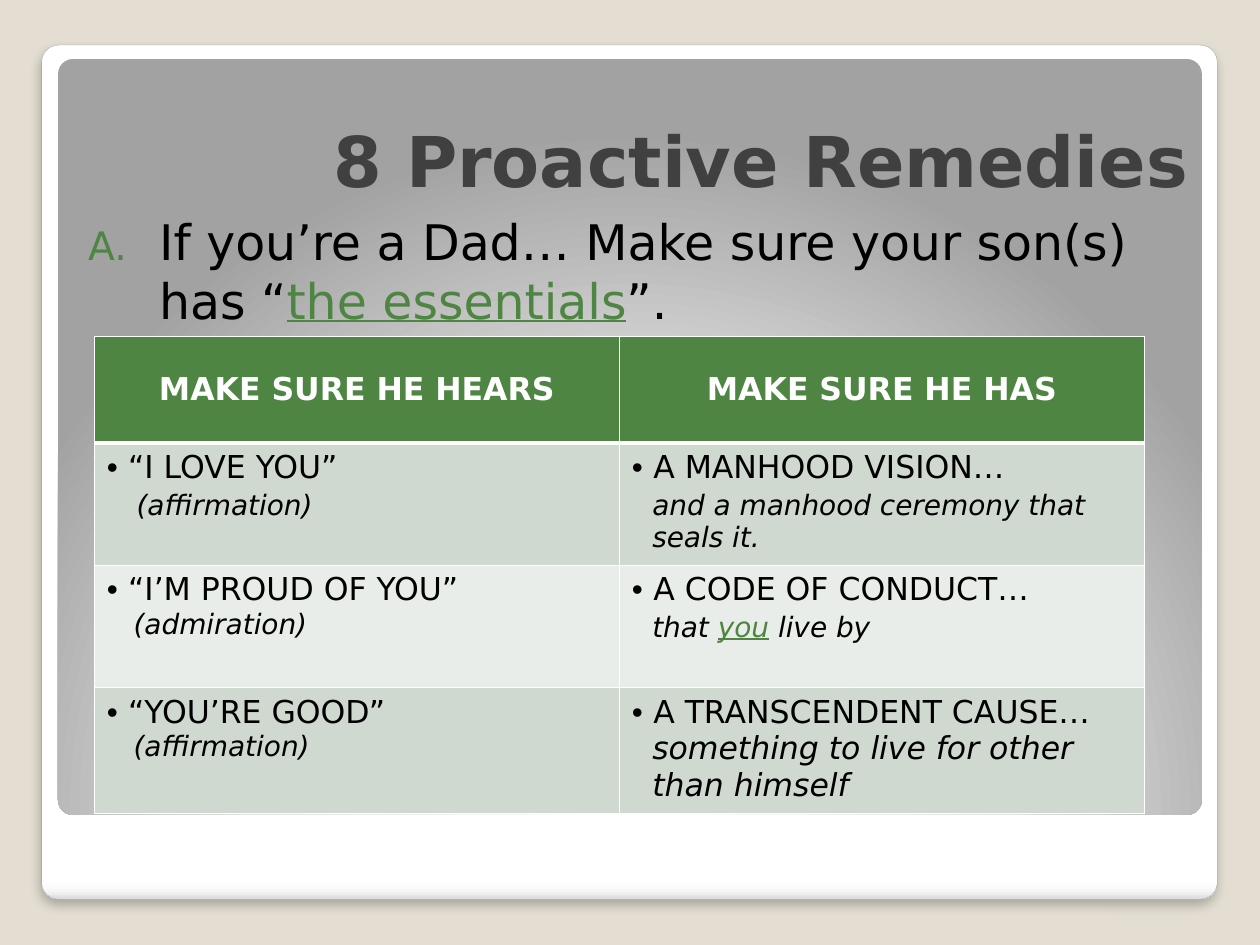
from lxml import etree
from pptx import Presentation
from pptx import util as u
from pptx.dml.color import RGBColor
from pptx.enum import shapes, text
from pptx.oxml.ns import qn

FONT = "DejaVu Sans"
SAND = RGBColor(0xE3, 0xDE, 0xD1)
WHITE = RGBColor(0xFF, 0xFF, 0xFF)
BLACK = RGBColor(0, 0, 0)
CHARCOAL = RGBColor(0x40, 0x40, 0x40)
EDGE_GRAY = RGBColor(0xA4, 0xA4, 0xA4)
PALE_GRAY = RGBColor(0xF7, 0xF7, 0xF7)
LIGHT_GRAY = RGBColor(0xDA, 0xDA, 0xDA)
MIST_GRAY = RGBColor(0xE1, 0xE1, 0xE1)
MID_GRAY = RGBColor(0xA2, 0xA2, 0xA2)
GREEN = RGBColor(0x4E, 0x85, 0x42)
BAND_DARK = RGBColor(0xD0, 0xD9, 0xCF)
BAND_LIGHT = RGBColor(0xE9, 0xED, 0xE9)

CARD_BOX = (0.84, 0.91, 23.7, 17.22)
PANEL_BOX = (1.17, 1.19, 23.06, 15.24)
TITLE_BOX = (1.47, 1.27, 22.73, 2.92)
BODY_BOX = (1.27, 4.01, 22.73, 13.34)
TABLE_BOX = (1.9, 6.78, 21.17, 9.55)
HEADER_HEIGHT = 2.15
BULLET_INDENT = 0.43

HEADERS = ("MAKE SURE HE HEARS", "MAKE SURE HE HAS")
# Each detail: left indent in cm, space before, size, lines of (words, stressed) runs
ROWS = [
    (("“I LOVE YOU”", (0.6, 2, 16, [[("(affirmation)", False)]])),
     ("A MANHOOD VISION…", (0.41, 2, 16, [
         [("and a manhood ceremony that", False)], [("seals it.", False)]]))),
    (("“I’M PROUD OF YOU”", (0.54, 0, 16, [[("(admiration)", False)]])),
     ("A CODE OF CONDUCT…", (0.41, 2, 16, [
         [("that ", False), ("you", True), (" live by", False)]]))),
    (("“YOU’RE GOOD”", (0.54, 0, 16, [[("(affirmation)", False)]])),
     ("A TRANSCENDENT CAUSE…", (0.41, 0, 18, [
         [("something to live for other", False)], [("than himself", False)]]))),
]


def lengths(box):
    return [u.Cm(value) for value in box]


def add_child(parent, tag, **attributes):
    return etree.SubElement(parent, qn(tag), {k: str(v) for k, v in attributes.items()})


def add_run(paragraph, words, size, color, bold=False, italic=False, underline=False):
    run = paragraph.add_run()
    run.text = words
    font = run.font
    font.name, font.size, font.color.rgb = FONT, u.Pt(size), color
    font.bold, font.italic, font.underline = bold, italic, underline


def set_indent(paragraph, left, first=0):
    properties = paragraph._p.get_or_add_pPr()
    properties.set("marL", str(u.Cm(left)))
    properties.set("indent", str(u.Cm(first)))
    return properties


def set_gradient(shape, stops):
    """Replace the fill with (percent, color) stops; return it for its direction."""
    shape.fill.background()
    properties = shape._element.spPr
    gradient = etree.Element(qn("a:gradFill"), {"rotWithShape": "1"})
    stop_list = add_child(gradient, "a:gsLst")
    for percent, color in stops:
        stop = add_child(stop_list, "a:gs", pos=percent * 1000)
        add_child(stop, "a:srgbClr", val=color)
    properties.replace(properties.find(qn("a:noFill")), gradient)
    return gradient


def add_rounded(slide, box):
    shape = slide.shapes.add_shape(shapes.MSO_SHAPE.ROUNDED_RECTANGLE, *lengths(box))
    shape.adjustments[0] = 0.02
    shape.shadow.inherit = False
    return shape


def add_card(slide, box):
    card = add_rounded(slide, box)
    gradient = set_gradient(
        card, [(0, WHITE), (98, WHITE), (99, PALE_GRAY), (100, LIGHT_GRAY)])
    add_child(gradient, "a:lin", ang=90 * 60000, scaled=0)
    card.line.color.rgb = EDGE_GRAY
    card.line.width = u.Pt(0.16)
    shadow = add_child(card._element.spPr.find(qn("a:effectLst")), "a:outerShdw",
                       blurRad=u.Pt(6), dist=u.Pt(4), dir=90 * 60000, rotWithShape=0)
    add_child(add_child(shadow, "a:srgbClr", val=BLACK), "a:alpha", val=25000)


def add_panel(slide, box):
    panel = add_rounded(slide, box)
    gradient = set_gradient(panel, [(0, WHITE), (55, MIST_GRAY), (100, MID_GRAY)])
    circle = add_child(gradient, "a:path", path="circle")
    add_child(circle, "a:fillToRect", l=50000, t=175000, r=50000, b=-75000)
    panel.line.fill.background()


def add_title(slide, box):
    frame = slide.shapes.add_textbox(*lengths(box)).text_frame
    frame.word_wrap = True
    frame.vertical_anchor = text.MSO_ANCHOR.BOTTOM
    paragraph = frame.paragraphs[0]
    paragraph.alignment = text.PP_ALIGN.RIGHT
    add_run(paragraph, "8 Proactive Remedies", 40, CHARCOAL, bold=True)


def add_body(slide, box):
    frame = slide.shapes.add_textbox(*lengths(box)).text_frame
    frame.word_wrap = True
    frame.margin_left, frame.margin_top = u.Cm(0.51), u.Cm(0.25)
    paragraph = frame.paragraphs[0]
    paragraph.space_before = u.Pt(2.5)
    properties = set_indent(paragraph, 1.43, -1.43)
    add_child(add_child(properties, "a:buClr"), "a:srgbClr", val=GREEN)
    add_child(properties, "a:buSzPct", val=80000)
    add_child(properties, "a:buFont", typeface=FONT)
    add_child(properties, "a:buAutoNum", type="alphaUcPeriod")
    add_run(paragraph, "If you’re a Dad… Make sure your son(s) has “", 28, BLACK)
    add_run(paragraph, "the essentials", 28, GREEN, underline=True)
    add_run(paragraph, "”.", 28, BLACK)


def style_cell(cell, color, top=1, bottom=1):
    properties = cell._tc.get_or_add_tcPr()
    for side, width in (("L", 1), ("R", 1), ("T", top), ("B", bottom)):
        border = add_child(properties, f"a:ln{side}", w=u.Pt(width))
        add_child(add_child(border, "a:solidFill"), "a:srgbClr", val=WHITE)
    cell.fill.solid()
    cell.fill.fore_color.rgb = color


def fill_cell(cell, heading, detail):
    """Write a bulleted heading with its italic detail lines below."""
    frame = cell.text_frame
    paragraph = frame.paragraphs[0]
    properties = set_indent(paragraph, BULLET_INDENT, -BULLET_INDENT)
    add_child(properties, "a:buFont", typeface="Arial")
    add_child(properties, "a:buChar", char="•")
    add_run(paragraph, heading, 18, BLACK)
    indent, space, size, lines = detail
    for index, line in enumerate(lines):
        paragraph = frame.add_paragraph()
        set_indent(paragraph, indent)
        paragraph.space_before = u.Pt(0 if index else space)
        for words, stressed in line:
            add_run(paragraph, words, size, GREEN if stressed else BLACK,
                    italic=True, underline=stressed)


def add_remedy_table(slide, box):
    table = slide.shapes.add_table(len(ROWS) + 1, len(HEADERS), *lengths(box)).table
    table.first_row = table.horz_banding = False
    for row in table.rows:
        row.height = u.Cm((box[3] - HEADER_HEIGHT) / len(ROWS))
    table.rows[0].height = u.Cm(HEADER_HEIGHT)
    for column, header in enumerate(HEADERS):
        cell = table.cell(0, column)
        style_cell(cell, GREEN, bottom=3)
        cell.vertical_anchor = text.MSO_ANCHOR.MIDDLE
        paragraph = cell.text_frame.paragraphs[0]
        paragraph.alignment = text.PP_ALIGN.CENTER
        add_run(paragraph, header, 18, WHITE, bold=True)
    for row, entries in enumerate(ROWS, 1):
        for column, (heading, detail) in enumerate(entries):
            cell = table.cell(row, column)
            style_cell(cell, BAND_DARK if row % 2 else BAND_LIGHT, top=3 if row == 1 else 1)
            fill_cell(cell, heading, detail)


def main():
    presentation = Presentation()
    presentation.slide_width, presentation.slide_height = u.Cm(25.4), u.Cm(19.05)
    slide = presentation.slides.add_slide(presentation.slide_layouts[6])
    slide.background.fill.solid()
    slide.background.fill.fore_color.rgb = SAND
    add_card(slide, CARD_BOX)
    add_panel(slide, PANEL_BOX)
    add_title(slide, TITLE_BOX)
    add_body(slide, BODY_BOX)
    add_remedy_table(slide, TABLE_BOX)
    presentation.save("out.pptx")


if __name__ == "__main__":
    main()
